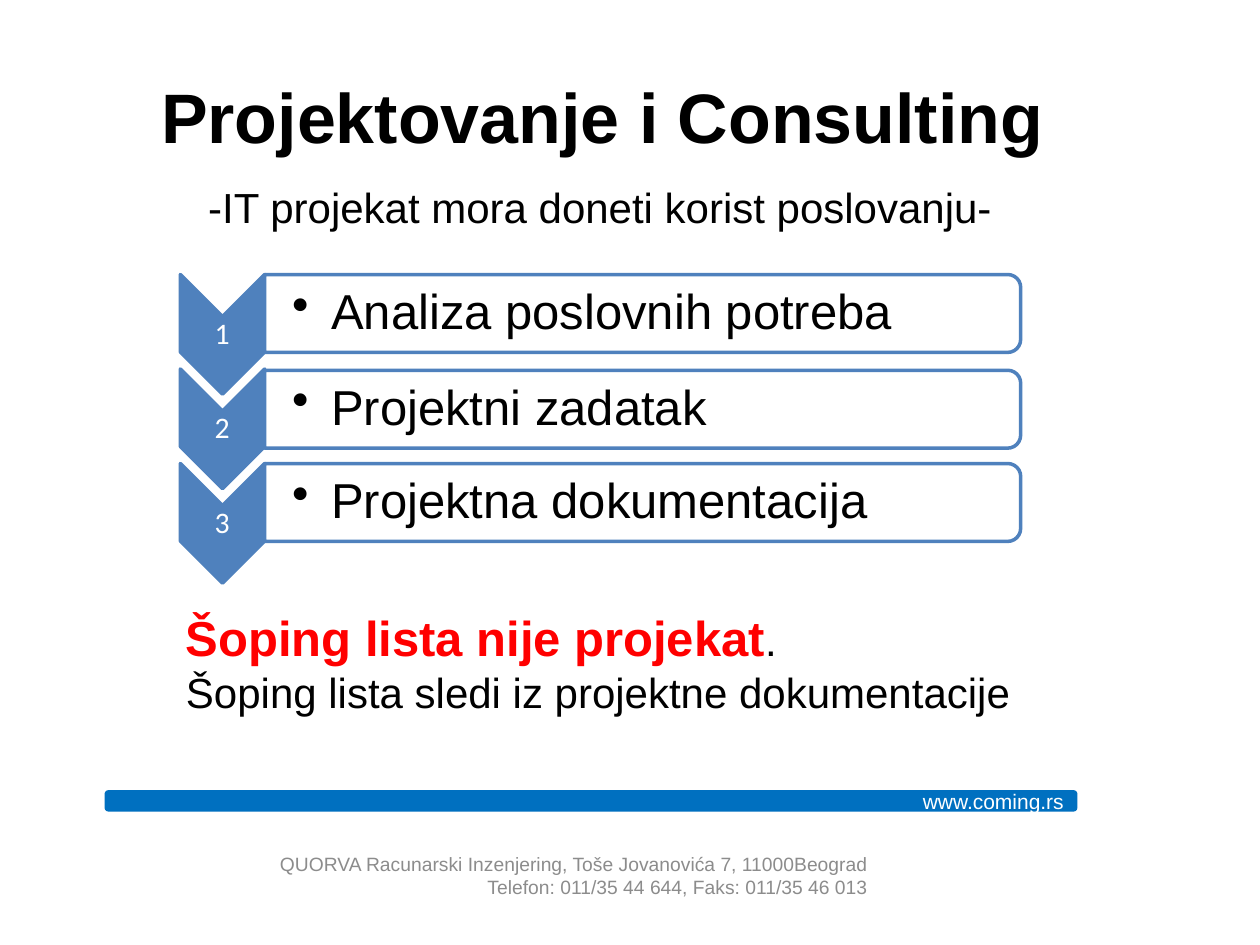
import pptx
import pptx.util
import pptx.dml.color
import pptx.enum.shapes
import pptx.enum.text
import pptx.oxml.ns
import lxml.etree

Cm, Pt = pptx.util.Cm, pptx.util.Pt
Shape = pptx.enum.shapes.MSO_SHAPE
Align = pptx.enum.text.PP_ALIGN
Anchor = pptx.enum.text.MSO_ANCHOR
BLUE, BAR_BLUE, WHITE, BLACK, RED, GREY = "4F81BD", "0070C0", "FFFFFF", "000000", "FF0000", "8C8C8C"


def color(value):
    return pptx.dml.color.RGBColor.from_string(value)


def write(frame, lines, anchor=Anchor.MIDDLE, margins=(0.25, 0.13, 0.25, 0.13), bullet=False, **paragraph_format):
    """Fill a text frame; each line is a list of (text, size, colour, bold, font) spans."""
    frame.word_wrap = True
    frame.vertical_anchor = anchor
    for side, margin in zip(("left", "top", "right", "bottom"), margins):
        setattr(frame, "margin_" + side, Cm(margin))
    for number, line in enumerate(lines):
        para = frame.add_paragraph() if number else frame.paragraphs[0]
        for name, value in paragraph_format.items():
            setattr(para, name, value)
        if bullet:
            properties = para._p.get_or_add_pPr()
            properties.set("marL", str(Cm(0.79)))
            properties.set("indent", str(-Cm(0.79)))
            lxml.etree.SubElement(properties, pptx.oxml.ns.qn("a:buChar")).set("char", "•")
        for text, size, tone, bold, font in line:
            span = para.add_run()
            span.text = text
            span.font.color.rgb = color(tone)
            for name, value in {"size": Pt(size), "bold": bold, "name": font}.items():
                setattr(span.font, name, value)


deck = pptx.Presentation()
deck.slide_width, deck.slide_height = Cm(25.4), Cm(19.05)
page = deck.slides.add_slide(deck.slide_layouts[6])

# Footer bar and numbered steps: chevrons and bars are turned a quarter
steps = ["Analiza poslovnih potreba", "Projektni zadatak", "Projektna dokumentacija"]
bar_tops = [5.61, 7.54, 9.42]
shapes = [(Shape.ROUNDED_RECTANGLE, (2.11, 15.93, 19.61, 0.43), 0, BAR_BLUE, None)]
for row, bar_top in enumerate(bar_tops):
    shapes.append((Shape.CHEVRON, (3.28, 5.89 + 1.905 * row, 2.41, 1.7), 90, BLUE, BLUE))
    shapes.append((Shape.ROUND_2_SAME_RECTANGLE, (12.17, bar_top - 6.91, 1.57, 15.24), 90, WHITE, BLUE))

drawn = []
for kind, place, turn, fill, line in shapes:
    shape = page.shapes.add_shape(kind, *map(Cm, place))
    shape.shadow.inherit = False
    shape.rotation = turn
    shape.fill.solid()
    shape.fill.fore_color.rgb = color(fill)
    if line:
        shape.line.color.rgb = color(line)
        shape.line.width = Pt(2)
    else:
        shape.line.fill.background()
    drawn.append(shape)
write(drawn[0].text_frame, [[("www.coming.rs", 12, WHITE, False, "Arial")]], alignment=Align.RIGHT)

for row, (step, bar_top) in enumerate(zip(steps, bar_tops)):
    number_box = page.shapes.add_textbox(Cm(3.63), Cm(6.38 + 1.905 * row), Cm(1.7), Cm(0.74))
    write(number_box.text_frame, [[(str(row + 1), 17, WHITE, False, "Calibri")]],
          margins=(0.03,) * 4, alignment=Align.CENTER, line_spacing=0.9)
    step_box = page.shapes.add_textbox(Cm(5.33), Cm(bar_top), Cm(15.16), Cm(1.42))
    write(step_box.text_frame, [[(step, 28, BLACK, False, "Arial")]],
          margins=(0.56, 0.05, 0.05, 0.05), bullet=True, line_spacing=0.9)

texts = [
    ((0.71, 0.74, 22.86, 3.18), Anchor.MIDDLE, Align.CENTER,
     [[("Projektovanje i Consulting", 40, BLACK, True, "Arial")]]),
    ((1.3, 3.53, 21.59, 1.27), Anchor.TOP, Align.CENTER,
     [[("-IT projekat mora doneti korist poslovanju-", 24, BLACK, False, "Arial")]]),
    ((3.5, 12.12, 24.1, 2.49), Anchor.TOP, Align.LEFT,
     [[("Šoping lista nije projekat", 28, RED, True, "Arial"), (".", 24, BLACK, False, "Arial")],
      [("Šoping lista sledi iz projektne dokumentacije", 24, BLACK, False, "Arial")]]),
    ((4.85, 16.99, 12.9, 1.32), Anchor.MIDDLE, Align.RIGHT,
     [[("QUORVA Racunarski Inzenjering, Toše Jovanovića 7, 11000Beograd", 11, GREY, False, "Arial")],
      [("Telefon: 011/35 44 644, Faks: 011/35 46 013", 11, GREY, False, "Arial")]]),
]
for place, anchor, alignment, lines in texts:
    box = page.shapes.add_textbox(*map(Cm, place))
    write(box.text_frame, lines, anchor, alignment=alignment)

deck.save("out.pptx")
